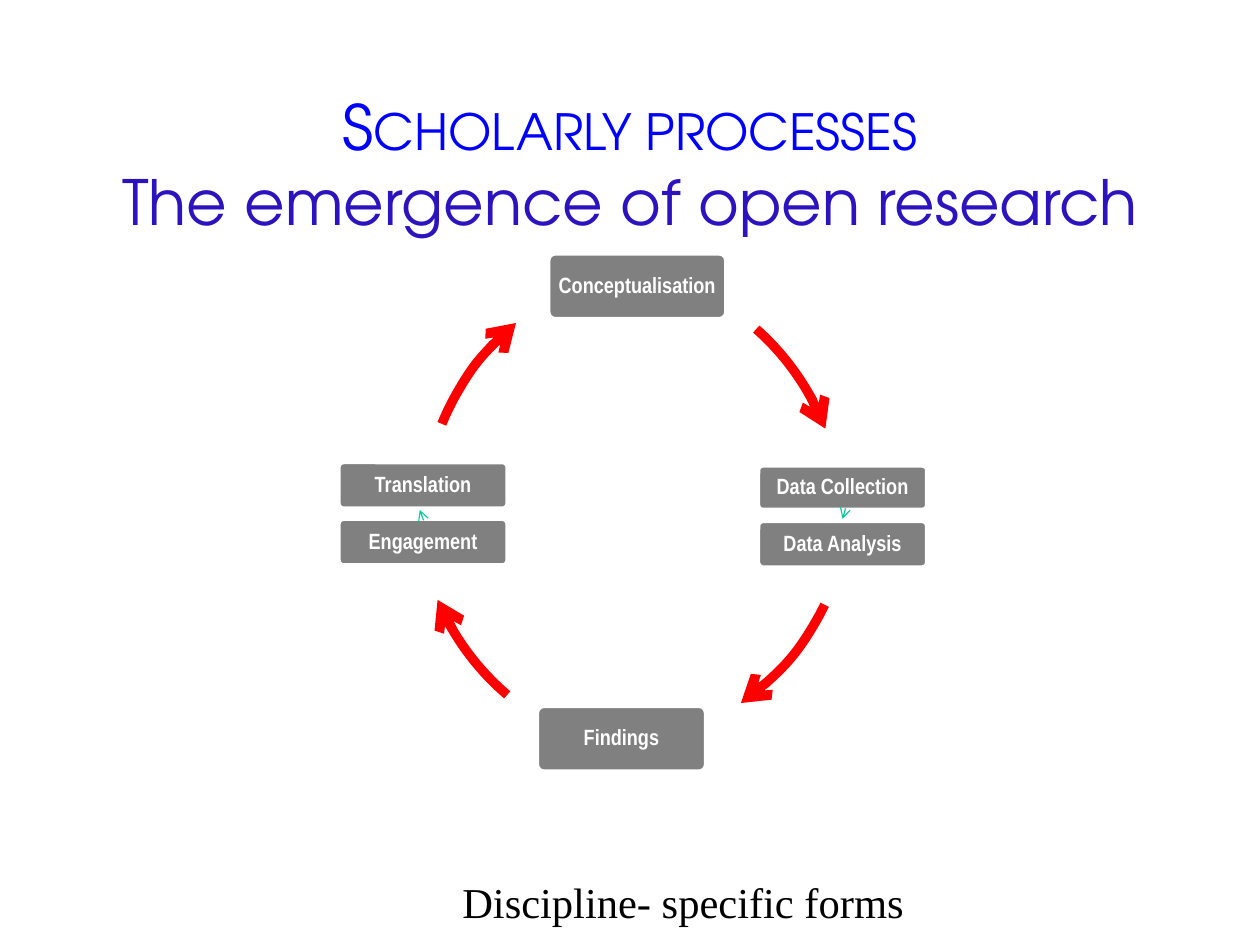
import pptx
import pptx.util
import pptx.dml.color
import pptx.enum.shapes
import pptx.enum.text
import pptx.oxml.ns
from lxml import etree

Pt = pptx.util.Pt
SHAPE = pptx.enum.shapes.MSO_SHAPE
MIDDLE = pptx.enum.text.MSO_ANCHOR.MIDDLE
CENTER = pptx.enum.text.PP_ALIGN.CENTER
RED, GREEN = "FF0000", "00CC99"
ARC_RADIUS = 163.1

# Clockwise: label, box (left, top, width, height), then the arrow that
# follows it (colour, width, centre x, centre y, start and end degrees).
STEPS = [
    ("Conceptualisation", (133.2, 0, 112.3, 41), (RED, 6, 156.6, 169.6, 311.6, 338.9)),
    ("Data Collection", (266.4, 134.6, 106.6, 27.4), (GREEN, 0.75, 163.1, 122.7, 14.4, 16.2)),
    ("Data Analysis", (266.4, 169.9, 106.6, 28.8), (RED, 6, 161.6, 151.5, 25.9, 55)),
    ("Findings", (126, 287.3, 106.6, 41), (RED, 6, 212.7, 155.9, 130.5, 157)),
    ("Engagement", (0, 168.5, 106.6, 28.8), (GREEN, 0.75, 204.8, 107.6, 158.7, 160.3)),
    ("Translation", (0, 132.5, 106.6, 28.8), (RED, 6, 216.3, 169.5, 202.2, 230.4)),
]


def color(hex_value):
    return pptx.dml.color.RGBColor.from_string(hex_value)


def format_run(r, font, size, hex_value, bold=False):
    r.font.name = font
    r.font.size = Pt(size)
    r.font.color.rgb = color(hex_value)
    r.font.bold = bold


def add_title(slide, x, y, w, h):
    sp = slide.shapes.title
    sp.left, sp.top, sp.width, sp.height = Pt(x), Pt(y), Pt(w), Pt(h)
    tf = sp.text_frame
    tf.text = "Scholarly processes\vThe emergence of open research"
    tf.auto_size = pptx.enum.text.MSO_AUTO_SIZE.NONE
    tf.vertical_anchor = MIDDLE
    p = tf.paragraphs[0]
    p.alignment = CENTER
    for r, hex_value in zip(p.runs, ("0000FF", "2C13BF")):
        format_run(r, "TeX Gyre Adventor", 39.6, hex_value)
    p.runs[0].font._element.set("cap", "small")


def add_step_box(slide, label, x, y, w, h):
    sp = slide.shapes.add_shape(SHAPE.ROUNDED_RECTANGLE, Pt(x), Pt(y), Pt(w), Pt(h))
    sp.adjustments[0] = 0.1
    sp.shadow.inherit = False
    sp.fill.solid()
    sp.fill.fore_color.rgb = color("808080")
    sp.line.color.rgb = color("FFFFFF")
    sp.line.width = Pt(2)
    tf = sp.text_frame
    tf.text = label
    tf.word_wrap = False
    tf.vertical_anchor = MIDDLE
    tf.margin_left = tf.margin_right = tf.margin_top = tf.margin_bottom = Pt(4.2)
    p = tf.paragraphs[0]
    p.alignment = CENTER
    p.line_spacing = 0.9
    format_run(p.runs[0], "Arial Narrow", 14, "FFFFFF", bold=True)


def add_arc_arrow(slide, hex_value, width, cx, cy, start, end):
    """Draw a clockwise arc between two angles, with an arrowhead at its end."""
    side = Pt(2 * ARC_RADIUS)
    sp = slide.shapes.add_shape(SHAPE.ARC, Pt(cx - ARC_RADIUS), Pt(cy - ARC_RADIUS), side, side)
    for i, angle in enumerate((start, end)):
        sp.adjustments[i] = angle * 0.6  # 60000 units a degree, scaled by 100000
    sp.shadow.inherit = False
    sp.fill.background()
    sp.line.color.rgb = color(hex_value)
    sp.line.width = Pt(width)
    ln = sp.line._get_or_add_ln()
    etree.SubElement(ln, pptx.oxml.ns.qn("a:tailEnd"), type="arrow")


def add_cycle(slide, x, y):
    for label, (left, top, w, h), (hex_value, width, cx, cy, start, end) in STEPS:
        add_step_box(slide, label, x + left, y + top, w, h)
        add_arc_arrow(slide, hex_value, width, x + cx, y + cy, start, end)


def add_caption(slide, x, y, w, h):
    tf = slide.shapes.add_textbox(Pt(x), Pt(y), Pt(w), Pt(h)).text_frame
    tf.text = "Discipline- specific forms"
    tf.word_wrap = True
    tf.margin_left = tf.margin_right = Pt(8)
    tf.margin_top = tf.margin_bottom = Pt(4)
    p = tf.paragraphs[0]
    p.alignment = CENTER
    format_run(p.runs[0], "Times New Roman", 27, "000000")


def main():
    prs = pptx.Presentation()
    prs.slide_width, prs.slide_height = Pt(800), Pt(600)
    slide = prs.slides.add_slide(prs.slide_layouts[5])
    add_title(slide, 60, 53.3, 680, 100)
    add_cycle(slide, 215.3, 161.3)
    add_caption(slide, 144.7, 552.2, 578, 41)
    prs.save("out.pptx")


if __name__ == "__main__":
    main()
